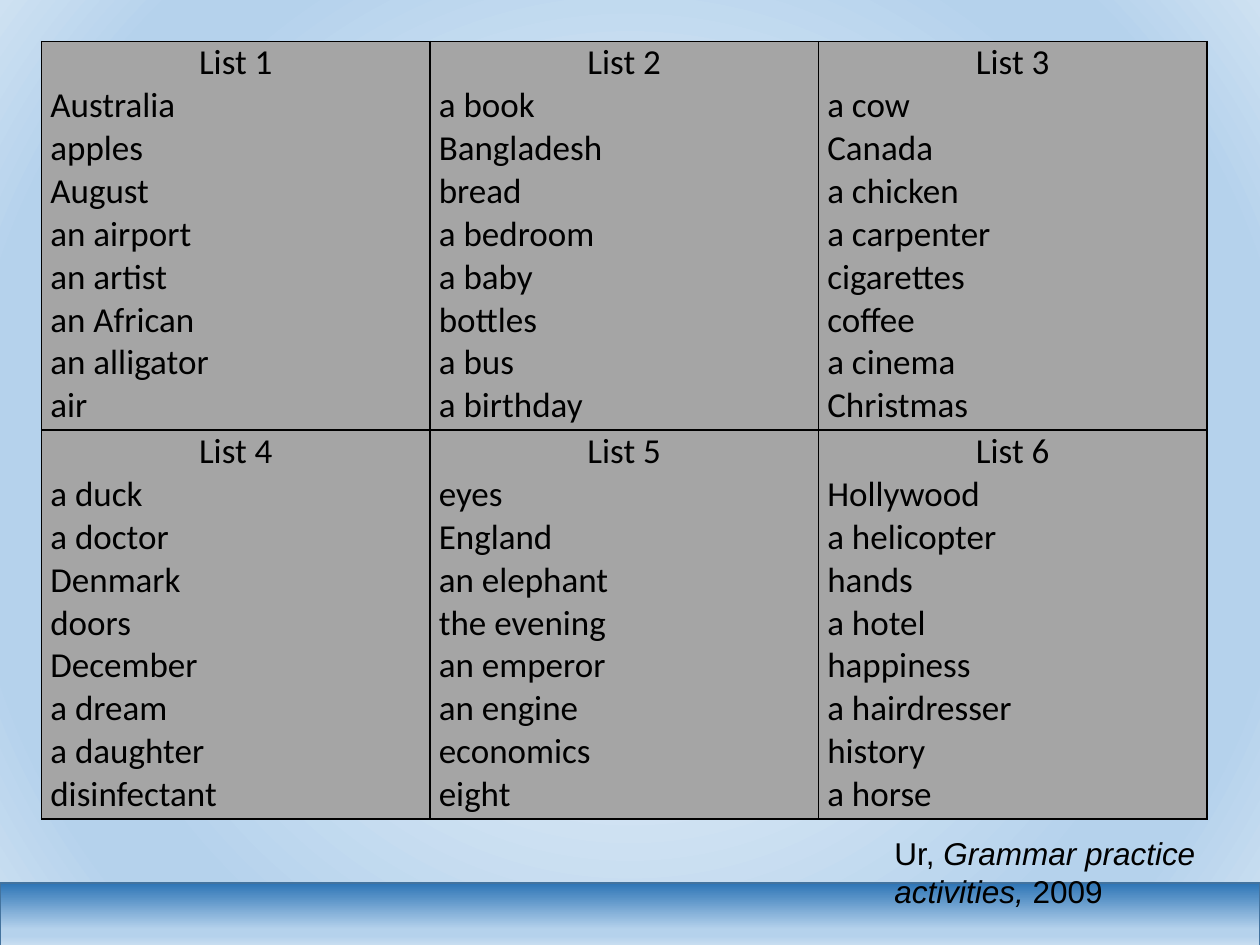
from dataclasses import dataclass

from lxml.etree import SubElement
from pptx import Presentation
from pptx.dml.color import RGBColor
from pptx.enum.shapes import MSO_SHAPE
from pptx.enum.text import MSO_AUTO_SIZE, PP_ALIGN
from pptx.oxml.ns import qn
from pptx.util import Inches, Pt


@dataclass(frozen=True)
class Theme:
    text: str = "000000"
    cell: str = "A5A5A5"
    border: str = "000000"
    band_line: str = "43739E"
    backdrop: tuple = ((0, "F7FAFD"), (74, "B5D2EC"), (83, "B5D2EC"), (100, "CEE1F2"))
    band: tuple = ((0, "2E75B6"), (72, "B5D2EC"), (83, "B5D2EC"), (100, "CEE1F2"))
    list_font: str = "Calibri"
    list_size: int = 20
    source_font: str = "Arial"
    source_size: int = 18


THEME = Theme()
WORD_LISTS = [
    [
        ["Australia", "apples", "August", "an airport", "an artist",
         "an African", "an alligator", "air"],
        ["a book", "Bangladesh", "bread", "a bedroom", "a baby",
         "bottles", "a bus", "a birthday"],
        ["a cow", "Canada", "a chicken", "a carpenter", "cigarettes",
         "coffee", "a cinema", "Christmas"],
    ],
    [
        ["a duck", "a doctor", "Denmark", "doors", "December",
         "a dream", "a daughter", "disinfectant"],
        ["eyes", "England", "an elephant", "the evening", "an emperor",
         "an engine", "economics", "eight"],
        ["Hollywood", "a helicopter", "hands", "a hotel", "happiness",
         "a hairdresser", "history", "a horse"],
    ],
]


def set_gradient(fill, owner, stops, radial=False):
    """Give the fill found inside owner any number of (percent, colour) stops."""
    fill.gradient()
    gradient = next(owner.iter(qn("a:gradFill")))
    for child in list(gradient):
        gradient.remove(child)
    stop_list = SubElement(gradient, qn("a:gsLst"))
    for percent, colour in stops:
        stop = SubElement(stop_list, qn("a:gs"), pos=str(percent * 1000))
        SubElement(stop, qn("a:srgbClr"), val=colour)
    if radial:
        direction = SubElement(gradient, qn("a:path"), path="circle")
        SubElement(direction, qn("a:fillToRect"), l="50000", t="50000", r="50000", b="50000")
    else:
        SubElement(gradient, qn("a:lin"), ang="5400000", scaled="0")


def format_run(run, font_name, size):
    run.font.name = font_name
    run.font.size = Pt(size)
    run.font.color.rgb = RGBColor.from_string(THEME.text)


def add_band(slide):
    band = slide.shapes.add_shape(
        MSO_SHAPE.RECTANGLE, Inches(0), Inches(7.01), Inches(10), Inches(0.51))
    band.shadow.inherit = False
    set_gradient(band.fill, band.element.spPr, THEME.band)
    band.line.color.rgb = RGBColor.from_string(THEME.band_line)
    band.line.width = Pt(1)


def set_borders(cell):
    properties = cell._tc.get_or_add_tcPr()
    for side in ("a:lnL", "a:lnR", "a:lnT", "a:lnB"):
        line = SubElement(properties, qn(side), w=str(Pt(1)))
        SubElement(SubElement(line, qn("a:solidFill")), qn("a:srgbClr"), val=THEME.border)


def fill_list_cell(cell, heading, words):
    set_borders(cell)
    cell.fill.solid()
    cell.fill.fore_color.rgb = RGBColor.from_string(THEME.cell)
    cell.margin_left = cell.margin_right = Inches(0.07)
    cell.margin_top = cell.margin_bottom = 0
    cell.text_frame.text = "\n".join([heading, *words])
    for paragraph in cell.text_frame.paragraphs:
        format_run(paragraph.runs[0], THEME.list_font, THEME.list_size)
    cell.text_frame.paragraphs[0].alignment = PP_ALIGN.CENTER


def add_word_table(slide):
    row_count, column_count = len(WORD_LISTS), len(WORD_LISTS[0])
    table = slide.shapes.add_table(
        row_count, column_count,
        Inches(0.33), Inches(0.33), Inches(9.25), Inches(6.17)).table
    table.first_row = table.horz_banding = False
    for row, lists in enumerate(WORD_LISTS):
        for column, words in enumerate(lists):
            number = row * column_count + column + 1
            fill_list_cell(table.cell(row, column), f"List {number}", words)


def add_source_note(slide):
    note = slide.shapes.add_textbox(Inches(7), Inches(6.57), Inches(2.83), Inches(0.71))
    frame = note.text_frame
    frame.word_wrap = True
    frame.auto_size = MSO_AUTO_SIZE.SHAPE_TO_FIT_TEXT
    citation = (("Ur, ", False), ("Grammar practice activities,", True), (" 2009", False))
    for wording, italic in citation:
        run = frame.paragraphs[0].add_run()
        run.text = wording
        run.font.italic = italic
        format_run(run, THEME.source_font, THEME.source_size)


def main():
    presentation = Presentation()
    presentation.slide_width = Inches(10)
    presentation.slide_height = Inches(7.5)
    slide = presentation.slides.add_slide(presentation.slide_layouts[6])
    set_gradient(slide.background.fill, slide.element, THEME.backdrop, radial=True)
    add_band(slide)
    add_word_table(slide)
    add_source_note(slide)
    presentation.save("out.pptx")


if __name__ == "__main__":
    main()
